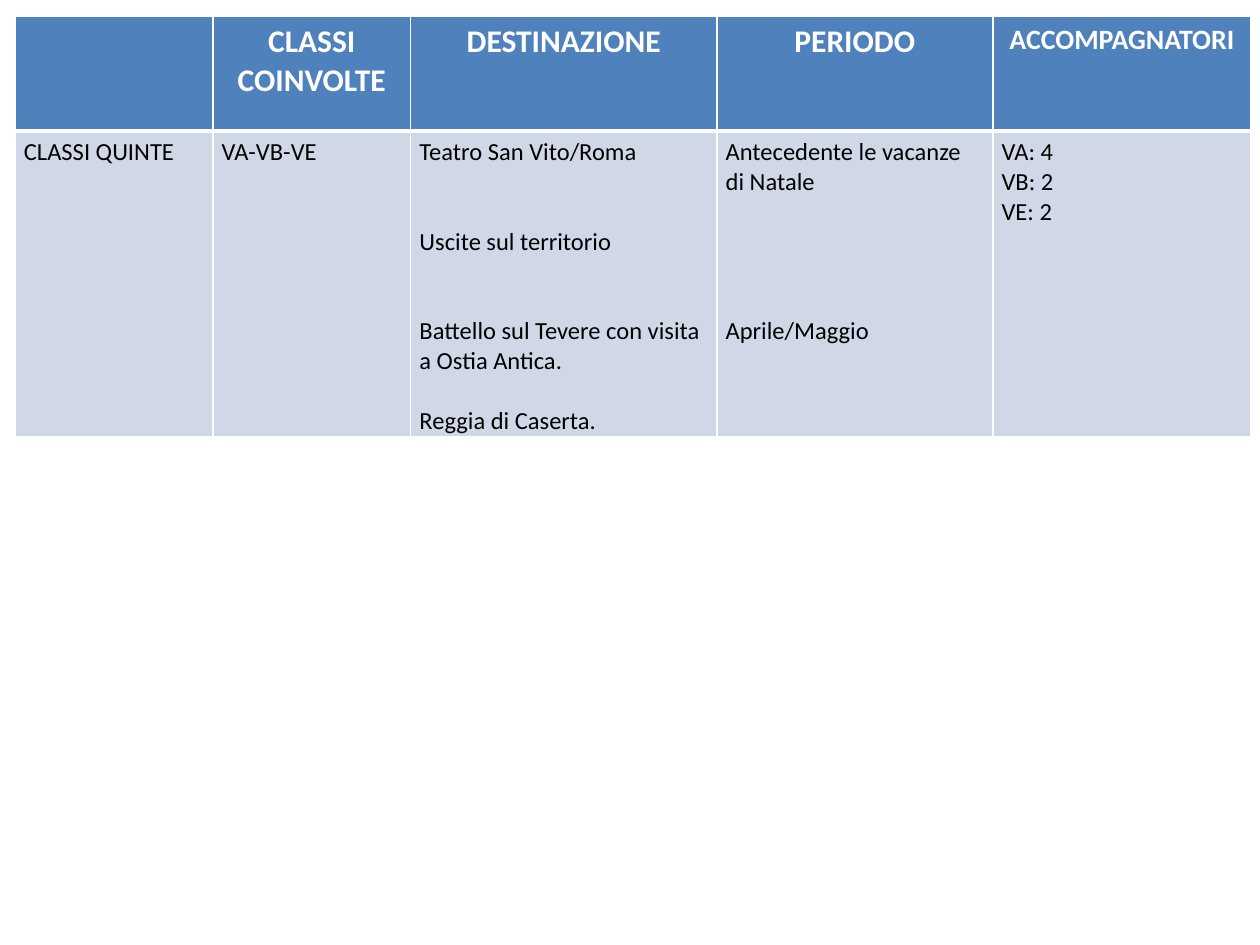
from lxml import etree
from pptx import Presentation
from pptx import util as u
from pptx.dml import color
from pptx.enum import text
from pptx.oxml import ns

COLORS = {"header": "4F81BD", "body": "D0D8E8", "white": "FFFFFF", "black": "000000"}
COLUMN_WIDTHS = [1.57, 1.57, 2.43, 2.19, 2.05]
ROW_HEIGHTS = [0.91, 2.43]
LINE_PITCH = 17.05
HEADERS = [
    ("", 18),
    ("CLASSI COINVOLTE", 18),
    ("DESTINAZIONE", 18),
    ("PERIODO", 18),
    ("ACCOMPAGNATORI", 16),
]
TRIPS = [
    [("CLASSI QUINTE", 0)],
    [("VA-VB-VE", 0)],
    [
        ("Teatro San Vito/Roma", 0),
        ("Uscite sul territorio", 2),
        ("Battello sul Tevere con visita a Ostia Antica.", 2),
        ("Reggia di Caserta.", 1),
    ],
    [("Antecedente le vacanze di Natale", 0), ("Aprile/Maggio", 4)],
    [("VA: 4", 0), ("VB: 2", 0), ("VE: 2", 0)],
]
BODY_MARGINS = {"margin_left": 0.07, "margin_top": 0.05, "margin_right": 0.07, "margin_bottom": 0}


def rgb(name):
    return color.RGBColor.from_string(COLORS[name])


def set_borders(cell, widths):
    properties = cell._tc.get_or_add_tcPr()
    for position, (side, width) in enumerate(widths.items()):
        line = etree.Element(ns.qn(f"a:ln{side}"), w=str(u.Pt(width)))
        fill = etree.SubElement(line, ns.qn("a:solidFill"))
        etree.SubElement(fill, ns.qn("a:srgbClr"), val=COLORS["white"])
        properties.insert(position, line)


def paint_cell(cell, fill, borders):
    cell.fill.solid()
    cell.fill.fore_color.rgb = rgb(fill)
    set_borders(cell, borders)


def write_paragraph(para, wording, font_color, font_format, para_format):
    for name, value in para_format.items():
        setattr(para, name, value)
    span = para.add_run()
    span.text = wording
    for name, value in font_format.items():
        setattr(span.font, name, value)
    span.font.color.rgb = rgb(font_color)


def fill_header(cell, wording, size):
    paint_cell(cell, "header", {"L": 1, "R": 1, "T": 1, "B": 3})
    if wording:
        font_format = {"name": "Calibri", "size": u.Pt(size), "bold": True}
        para_format = {"alignment": text.PP_ALIGN.CENTER}
        write_paragraph(cell.text_frame.paragraphs[0], wording, "white", font_format, para_format)


def fill_body(cell, entries):
    paint_cell(cell, "body", {"L": 1, "R": 1, "T": 3, "B": 1})
    for name, value in BODY_MARGINS.items():
        setattr(cell, name, u.Inches(value))
    frame = cell.text_frame
    font_format = {"name": "Calibri", "size": u.Pt(14), "bold": False}
    for index, (wording, gap_lines) in enumerate(entries):
        para = frame.add_paragraph() if index else frame.paragraphs[0]
        para_format = {"space_before": u.Pt(gap_lines * LINE_PITCH)} if gap_lines else {}
        write_paragraph(para, wording, "black", font_format, para_format)


def add_trip_table(page):
    frame = page.shapes.add_table(
        len(ROW_HEIGHTS), len(COLUMN_WIDTHS), u.Inches(0.12), u.Inches(0.13),
        u.Inches(sum(COLUMN_WIDTHS)), u.Inches(sum(ROW_HEIGHTS)),
    )
    table = frame.table
    table.horz_banding = False
    for column, width in zip(table.columns, COLUMN_WIDTHS):
        column.width = u.Inches(width)
    for row, height in zip(table.rows, ROW_HEIGHTS):
        row.height = u.Inches(height)
    for index, (header, entries) in enumerate(zip(HEADERS, TRIPS)):
        fill_header(table.cell(0, index), *header)
        fill_body(table.cell(1, index), entries)


def main():
    deck = Presentation()
    deck.slide_width = u.Inches(10)
    deck.slide_height = u.Inches(7.5)
    page = deck.slides.add_slide(deck.slide_layouts[6])
    add_trip_table(page)
    deck.save("out.pptx")


if __name__ == "__main__":
    main()
